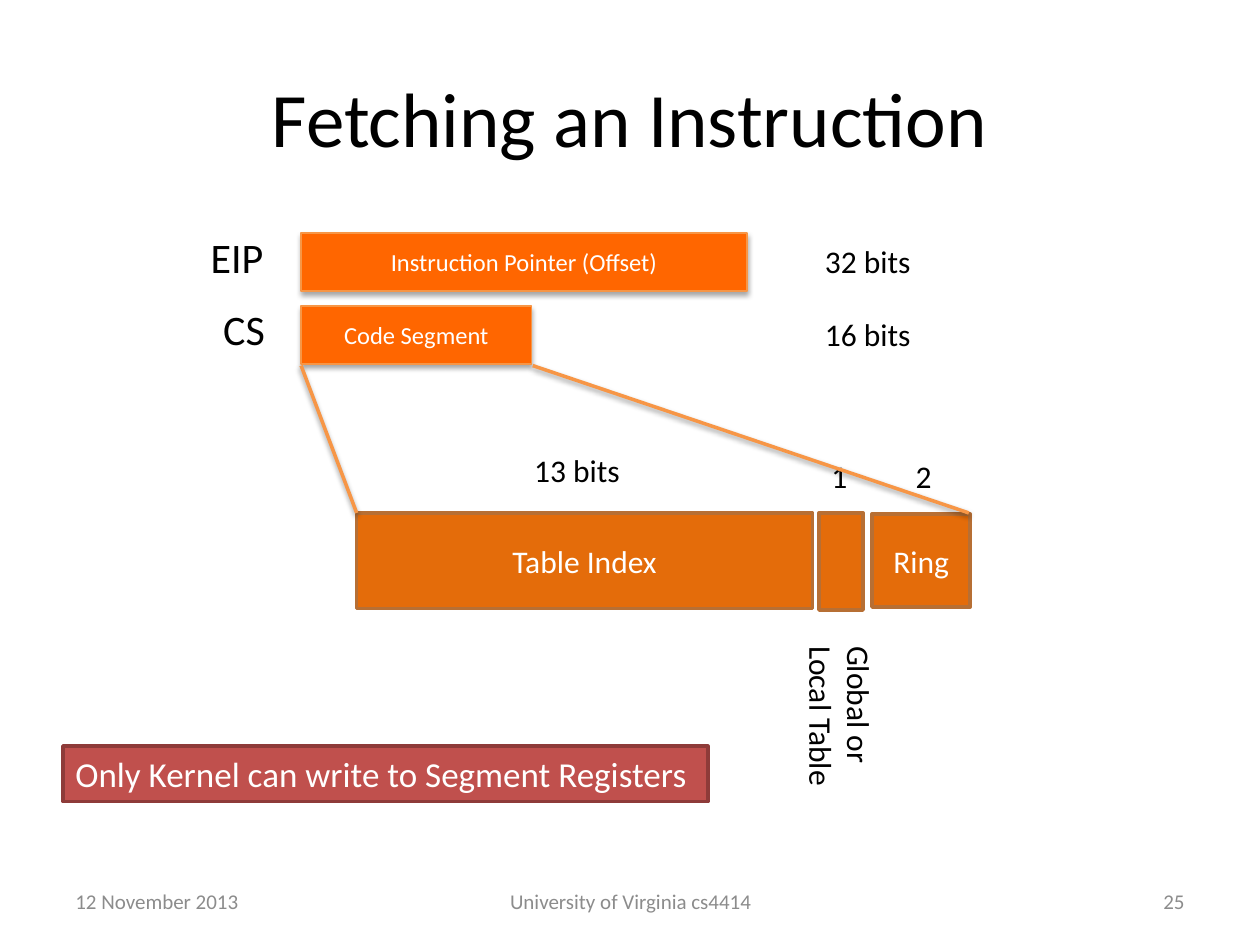
"""Build the slide on fetching an instruction through the segment registers."""
from dataclasses import dataclass

from lxml.etree import SubElement
from pptx import Presentation
from pptx.dml.color import RGBColor
from pptx.enum.shapes import MSO_CONNECTOR, MSO_SHAPE
from pptx.enum.text import MSO_ANCHOR, PP_ALIGN
from pptx.oxml.ns import qn
from pptx.util import Cm, Pt


@dataclass(frozen=True)
class Theme:
    font: str = "Calibri"
    ink: str = "000000"
    paper: str = "FFFFFF"
    muted: str = "8C8C8C"
    register: str = "FF6600"
    register_edge: str = "F79646"
    field: str = "E46C0A"
    field_edge: str = "B76F34"
    warning: str = "C0504D"
    warning_edge: str = "8E3B39"
    title: int = 44
    name: int = 24
    note: int = 20
    body: int = 18
    small: int = 14
    footer: int = 12


theme = Theme()
deck = Presentation()
deck.slide_width, deck.slide_height = Cm(25.4), Cm(19.05)
page = deck.slides.add_slide(deck.slide_layouts[6])


def add_box(text, at, size, color=theme.ink, align=PP_ALIGN.LEFT, anchor=MSO_ANCHOR.TOP,
            wrap=True, fill=None, edge=None, weight=2):
    place = [Cm(length) for length in at]
    if fill:
        box = page.shapes.add_shape(MSO_SHAPE.RECTANGLE, *place)
        box.shadow.inherit = False
        box.fill.solid()
        box.fill.fore_color.rgb = RGBColor.from_string(fill)
        if edge:
            box.line.color.rgb = RGBColor.from_string(edge)
            box.line.width = Pt(weight)
        else:
            box.line.fill.background()
    else:
        box = page.shapes.add_textbox(*place)
    frame = box.text_frame
    frame.word_wrap = wrap
    frame.vertical_anchor = anchor
    para = frame.paragraphs[0]
    para.text = text
    para.alignment = align
    para.font.name = theme.font
    para.font.size = Pt(size)
    para.font.color.rgb = RGBColor.from_string(color)
    return box


def add_shadow(shape, distance, opacity):
    properties = shape._element.spPr
    effects = properties.find(qn("a:effectLst"))
    if effects is None:
        effects = SubElement(properties, qn("a:effectLst"))
    shadow = SubElement(effects, qn("a:outerShdw"), blurRad=str(Pt(3.1)),
                        dist=str(Pt(distance)), dir="5400000", rotWithShape="0")
    tint = SubElement(shadow, qn("a:srgbClr"), val=theme.ink)
    SubElement(tint, qn("a:alpha"), val=str(opacity * 1000))


add_box("Fetching an Instruction", (1.27, 0.76, 22.86, 3.18), theme.title,
        align=PP_ALIGN.CENTER, anchor=MSO_ANCHOR.MIDDLE)

for text, left, width, align in (
    ("12 November 2013", 1.27, 5.92, PP_ALIGN.LEFT),
    ("University of Virginia cs4414", 8.69, 8.05, PP_ALIGN.CENTER),
    ("25", 18.21, 5.92, PP_ALIGN.RIGHT),
):
    add_box(text, (left, 17.65, width, 1.02), theme.footer, theme.muted, align, MSO_ANCHOR.MIDDLE)

for text, top, width in (
    ("Code Segment", 6.17, 4.65),
    ("Instruction Pointer (Offset)", 4.7, 8.99),
):
    register = add_box(text, (6.07, top, width, 1.17), theme.small, theme.paper, PP_ALIGN.CENTER,
                       MSO_ANCHOR.MIDDLE, fill=theme.register, edge=theme.register_edge, weight=0.75)
    add_shadow(register, 1.8, 35)

for text, left, top, width in (("EIP", 3.99, 4.55, 1.57), ("CS", 4.22, 5.99, 1.37)):
    add_box(text, (left, top, width, 1.27), theme.name, align=PP_ALIGN.RIGHT, wrap=False,
            fill=theme.paper)

for text, *at in (
    ("Table Index", 7.19, 10.34, 9.19, 1.93),
    ("", 16.51, 10.34, 0.89, 1.96),
    ("Ring", 17.58, 10.36, 1.98, 1.88),
):
    add_box(text, at, theme.body, theme.paper, PP_ALIGN.CENTER, MSO_ANCHOR.MIDDLE,
            fill=theme.field, edge=theme.field_edge)

for text, left, top, width in (
    ("32 bits", 16.38, 4.75, 2.26),
    ("16 bits", 16.38, 6.22, 2.26),
    ("13 bits", 10.52, 8.97, 2.26),
    ("1", 16.51, 9.09, 0.84),
    ("2", 18.21, 9.09, 0.84),
):
    add_box(text, (left, top, width, 1.02), theme.body, wrap=False)

table_choice = add_box("Global or Local Table", (14.94, 13.87, 3.99, 1.8), theme.body)
table_choice.rotation = 90

for start, end in ((6.07, 7.19), (10.74, 19.53)):
    ray = page.shapes.add_connector(MSO_CONNECTOR.STRAIGHT, Cm(start), Cm(7.37), Cm(end), Cm(10.34))
    ray.line.color.rgb = RGBColor.from_string(theme.register_edge)
    ray.line.width = Pt(2)
    add_shadow(ray, 1.6, 38)

add_box("Only Kernel can write to Segment Registers", (1.27, 15.04, 13, 1.12), theme.note,
        theme.paper, wrap=False, fill=theme.warning, edge=theme.warning_edge)

deck.save("out.pptx")
